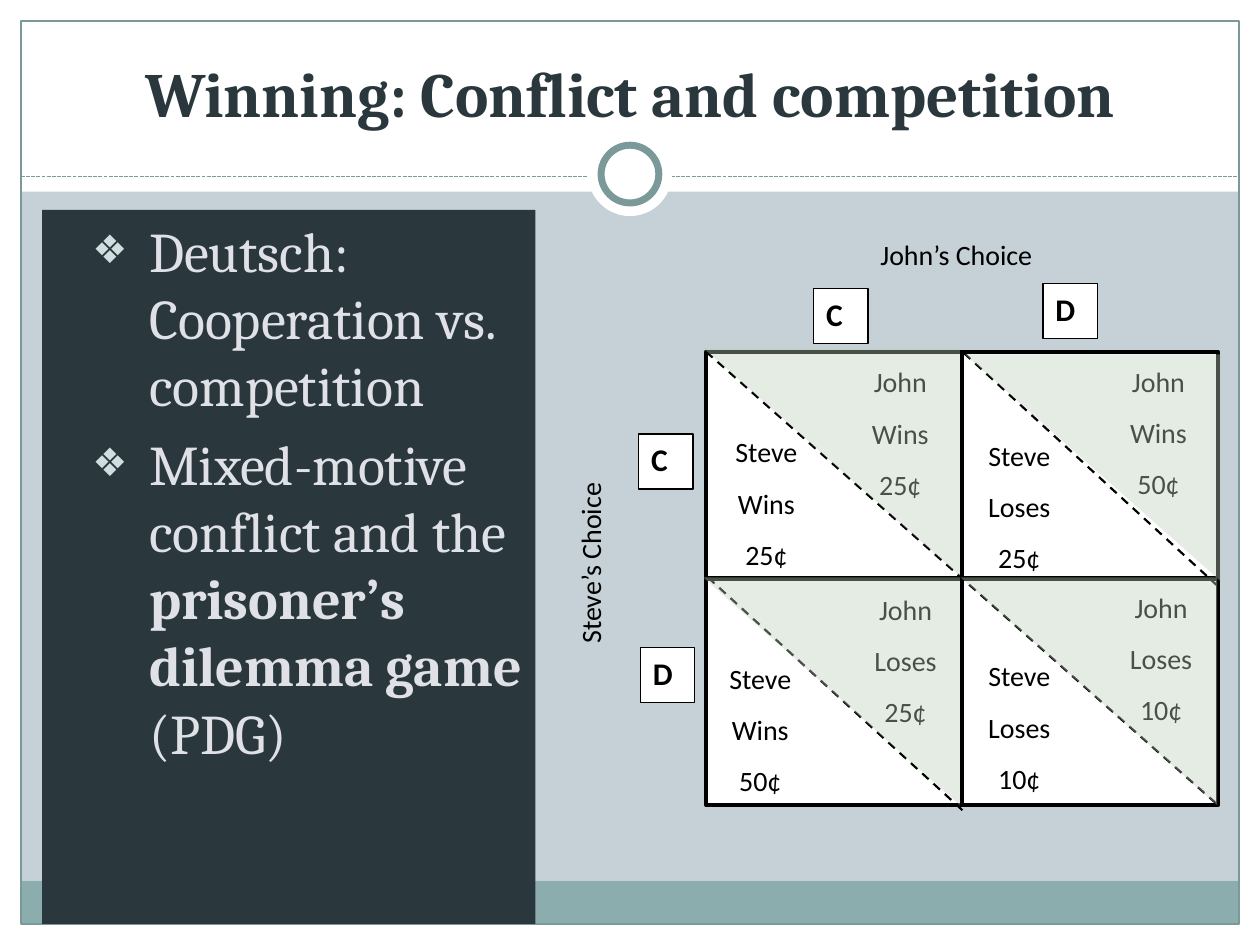
from lxml import etree
from pptx import Presentation
from pptx.dml.color import RGBColor
from pptx.enum.dml import MSO_LINE
from pptx.enum.shapes import MSO_CONNECTOR, MSO_SHAPE
from pptx.enum.text import MSO_ANCHOR, MSO_AUTO_SIZE, PP_ALIGN
from pptx.oxml.ns import qn
from pptx.util import Pt

RECT, OVAL = MSO_SHAPE.RECTANGLE, MSO_SHAPE.OVAL
STRAIGHT = MSO_CONNECTOR.STRAIGHT
DASH, SYS_DASH = MSO_LINE.DASH, MSO_LINE.SQUARE_DOT
LEFT, CENTER = PP_ALIGN.LEFT, PP_ALIGN.CENTER
TOP, BOTTOM = MSO_ANCHOR.TOP, MSO_ANCHOR.BOTTOM
NO_FIT = MSO_AUTO_SIZE.NONE


def rgb(value):
    return RGBColor.from_string(value)


def write(sp, lines, size, align=LEFT, bold=False):
    tf = sp.text_frame
    tf.word_wrap = True
    tf.vertical_anchor = TOP
    tf.text = "\n".join(lines)
    for p in tf.paragraphs:
        p.alignment = align
        p.space_after = Pt(10)
        p.font.name = "Calibri"
        p.font.size = Pt(size)
        p.font.bold = bold
        p.font.color.rgb = rgb("000000")


prs = Presentation()
prs.slide_width, prs.slide_height = Pt(720), Pt(540)
s = prs.slides.add_slide(prs.slide_layouts[1])
s.background.fill.solid()
s.background.fill.fore_color.rgb = rgb("C5D1D7")
title, body = s.placeholders[0], s.placeholders[1]

for kind, x, y, w, h, fill, line, weight in [
    (RECT, 0, 528, 720, 12, "FFFFFF", None, 0),
    (RECT, 0, 0, 720, 109.5, "FFFFFF", None, 0),
    (RECT, 0, 0, 12, 540, "FFFFFF", None, 0),
    (RECT, 708, 0, 12, 540, "FFFFFF", None, 0),
    (RECT, 11.75, 503.5, 695.75, 24.5, "8CADAE", None, 0),
    (RECT, 12, 12, 696, 516, None, "7C999A", 0.75),
    (None, 12, 101, 696, 0, None, "7C999A", 0.75),
    (OVAL, 336, 75.5, 48, 48, "FFFFFF", None, 0),
    (OVAL, 343.5, 83, 33, 33, "FFFFFF", "7C999A", 4),
]:
    if kind is None:
        sp = s.shapes.add_connector(STRAIGHT, Pt(x), Pt(y), Pt(x + w), Pt(y))
        sp.line.dash_style = SYS_DASH
        etree.SubElement(sp._element.spPr, qn("a:effectLst"))
    else:
        sp = s.shapes.add_shape(kind, Pt(x), Pt(y), Pt(w), Pt(h))
        sp.shadow.inherit = False
        if fill:
            sp.fill.solid()
            sp.fill.fore_color.rgb = rgb(fill)
        else:
            sp.fill.background()
    if line:
        sp.line.color.rgb = rgb(line)
        sp.line.width = Pt(weight)
    else:
        sp.line.fill.background()

for sp, x, y, w, h in [(title, 24, 18, 672, 60), (body, 24, 120, 282, 408)]:
    sp.left, sp.top, sp.width, sp.height = Pt(x), Pt(y), Pt(w), Pt(h)
    s.shapes._spTree.append(sp._element)

tf = title.text_frame
tf.text = "Winning: Conflict and competition"
tf.auto_size = NO_FIT
tf.vertical_anchor = BOTTOM
p = tf.paragraphs[0]
p.alignment = CENTER
p.font.name = "Cambria"
p.font.size = Pt(36)
p.font.bold = True
p.font.color.rgb = rgb("2A373D")

body.fill.solid()
body.fill.fore_color.rgb = rgb("2A373D")
tf = body.text_frame
tf.auto_size = NO_FIT
tf.text = "Deutsch: Cooperation vs. competition"
p = tf.add_paragraph()
for text, bold in [("Mixed-motive conflict and the ", False),
                   ("prisoner’s dilemma game ", True), ("(PDG)", False)]:
    r = p.add_run()
    r.text = text
    r.font.bold = bold
for p in tf.paragraphs:
    p.space_before = Pt(6.4)
    p.font.name = "Cambria"
    p.font.size = Pt(32)
    p.font.color.rgb = rgb("DFE1E7")
    pPr = p._p.get_or_add_pPr()
    pPr.set("marL", str(Pt(54)))
    pPr.set("indent", str(Pt(-32.4)))
    bullet_color = etree.Element(qn("a:buClr"))
    etree.SubElement(bullet_color, qn("a:srgbClr"), val="D1DEDF")
    bullet_size = etree.Element(qn("a:buSzPct"), val="70000")
    bullet_char = etree.Element(qn("a:buChar"), char="❖")
    default = pPr.find(qn("a:defRPr"))
    for bullet in (bullet_color, bullet_size, bullet_char):
        default.addprevious(bullet)

grid = s.shapes.add_shape(RECT, Pt(403.5), Pt(201), Pt(292.5), Pt(259))
grid.shadow.inherit = False
grid.fill.solid()
grid.fill.fore_color.rgb = rgb("FFFFFF")
grid.line.color.rgb = rgb("000000")
grid.line.width = Pt(2.5)

for x1, y1, x2, y2, weight, sites in [
    (403.5, 330.5, 696, 330.5, 2.5, (1, 3)),
    (549.75, 201, 549.75, 460, 2.5, (0, 2)),
    (550, 463, 403.5, 329, 1.25, None),
    (696, 335, 550, 201, 1.25, None),
    (403.5, 201, 696, 460, 1.25, None),
]:
    line = s.shapes.add_connector(STRAIGHT, Pt(x1), Pt(y1), Pt(x2), Pt(y2))
    line.line.color.rgb = rgb("000000")
    line.line.width = Pt(weight)
    etree.SubElement(line._element.spPr, qn("a:effectLst"))
    if sites:
        line.begin_connect(grid, sites[0])
        line.end_connect(grid, sites[1])
    else:
        line.line.dash_style = DASH

for x, y, player, result, amount in [
    (476, 205, "John", "Wins", "25¢"),
    (479, 335, "John", "Loses", "25¢"),
    (623.5, 204.5, "John", "Wins", "50¢"),
    (625, 334, "John", "Loses", "10¢"),
    (544, 247, "Steve", "Loses", "25¢"),
    (396, 374.5, "Steve", "Wins", "50¢"),
    (544, 373, "Steve", "Loses", "10¢"),
    (399.5, 245, "Steve", "Wins", "25¢"),
]:
    sp = s.shapes.add_textbox(Pt(x), Pt(y), Pt(77), Pt(78.5))
    write(sp, [player, result, amount], 16, CENTER)

sp = s.shapes.add_textbox(Pt(496), Pt(132), Pt(131), Pt(31.5))
write(sp, ["John’s Choice"], 16)
sp = s.shapes.add_textbox(Pt(324), Pt(234), Pt(31), Pt(141))
write(sp, ["Steve’s Choice"], 16)
sp.text_frame._txBody.bodyPr.set("vert", "vert270")

for x, y, choice in [(465, 165, "C"), (365, 248, "C"),
                     (596, 162, "D"), (366, 370, "D")]:
    sp = s.shapes.add_shape(RECT, Pt(x), Pt(y), Pt(31), Pt(31.5))
    sp.shadow.inherit = False
    sp.fill.solid()
    sp.fill.fore_color.rgb = rgb("FFFFFF")
    sp.line.color.rgb = rgb("000000")
    sp.line.width = Pt(0.75)
    write(sp, [choice], 18, bold=True)

for x, y in [(402, 330), (551.5, 202.5), (402, 199), (549, 330)]:
    fb = s.shapes.build_freeform(Pt(x), Pt(y))
    fb.add_line_segments([(Pt(x + 146.5), Pt(y)), (Pt(x + 146.5), Pt(y + 130))])
    sp = fb.convert_to_shape()
    sp.shadow.inherit = False
    sp.line.fill.background()
    sp.fill.solid()
    sp.fill.fore_color.rgb = rgb("BCD0BA")
    color = sp._element.spPr.find(qn("a:solidFill"))[0]
    etree.SubElement(color, qn("a:alpha"), val="39000")

prs.save("out.pptx")
